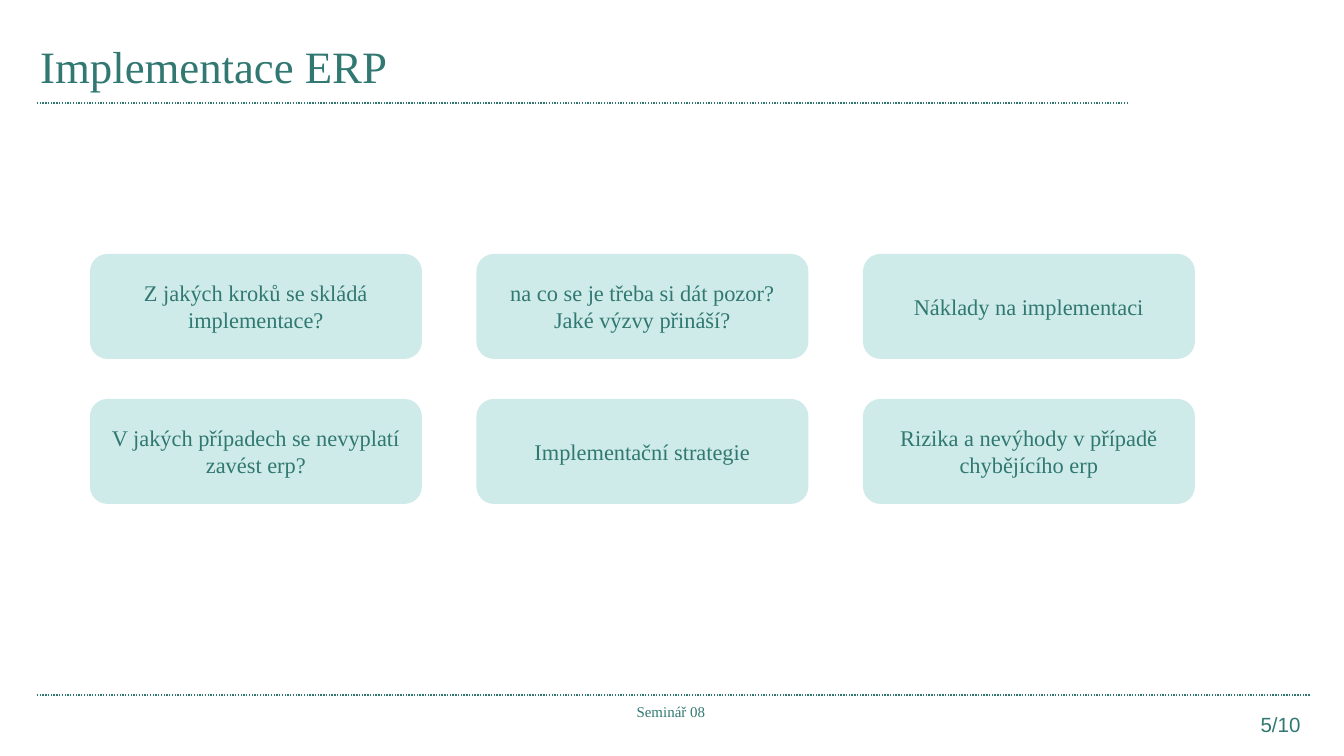
"""Build the ERP implementation slide with six discussion topics."""
from lxml import etree
from pptx import Presentation
from pptx.dml.color import RGBColor
from pptx.enum.dml import MSO_LINE
from pptx.enum.shapes import MSO_CONNECTOR, MSO_SHAPE
from pptx.enum.text import MSO_ANCHOR, PP_ALIGN
from pptx.oxml.ns import qn
from pptx.util import Emu, Pt

ROUNDED = MSO_SHAPE.ROUNDED_RECTANGLE
STRAIGHT = MSO_CONNECTOR.STRAIGHT
DOTTED = MSO_LINE.ROUND_DOT
MIDDLE = MSO_ANCHOR.MIDDLE
LEFT, CENTER = PP_ALIGN.LEFT, PP_ALIGN.CENTER
TEAL = RGBColor(0x30, 0x78, 0x71)
PALE_TEAL = RGBColor(0xCE, 0xEB, 0xE9)
SERIF, SANS = "Times New Roman", "Arial"
SCALE = 914400 / 134.4


def px(*lengths):
    return [Emu(round(length * SCALE)) for length in lengths]


def write(shape, text, size, font_name, align):
    frame = shape.text_frame
    frame.word_wrap = True
    frame.vertical_anchor = MIDDLE
    frame.text = text
    paragraph = frame.paragraphs[0]
    paragraph.alignment = align
    font = paragraph.runs[0].font
    font.size = Pt(size)
    font.name = font_name
    font.color.rgb = TEAL


deck = Presentation()
deck.slide_width, deck.slide_height = px(1344, 756)
slide = deck.slides.add_slide(deck.slide_layouts[6])
shapes = slide.shapes

for rule_y, rule_end in [(103, 1127), (695, 1310)]:
    rule = shapes.add_connector(STRAIGHT, *px(37, rule_y, rule_end, rule_y))
    rule.line.color.rgb = TEAL
    rule.line.width = Pt(0.75)
    rule.line.dash_style = DOTTED
    etree.SubElement(rule.line._get_or_add_ln().getparent(), qn("a:effectLst"))

labels = [
    ("Implementace ERP", (27, 28, 571, 75), 24, SERIF, LEFT),
    ("5/10", (1239, 703, 83, 42), 11, SANS, CENTER),
    ("Seminář 08", (396, 696, 550, 31), 8, SERIF, CENTER),
]
for text, box, size, font_name, align in labels:
    write(shapes.add_textbox(*px(*box)), text, size, font_name, align)

topics = [
    "Z jakých kroků se skládá implementace?",
    "na co se je třeba si dát pozor? Jaké výzvy přináší?",
    "Náklady na implementaci",
    "V jakých případech se nevyplatí zavést erp?",
    "Implementační strategie",
    "Rizika a nevýhody v případě chybějícího erp",
]
for index, topic in enumerate(topics):
    row, column = divmod(index, 3)
    card = shapes.add_shape(
        ROUNDED, *px(90 + 386.5 * column, 254 + 145 * row, 332, 105))
    card.shadow.inherit = False
    card.fill.solid()
    card.fill.fore_color.rgb = PALE_TEAL
    card.line.fill.background()
    write(card, topic, 12, SERIF, CENTER)

deck.save("out.pptx")
